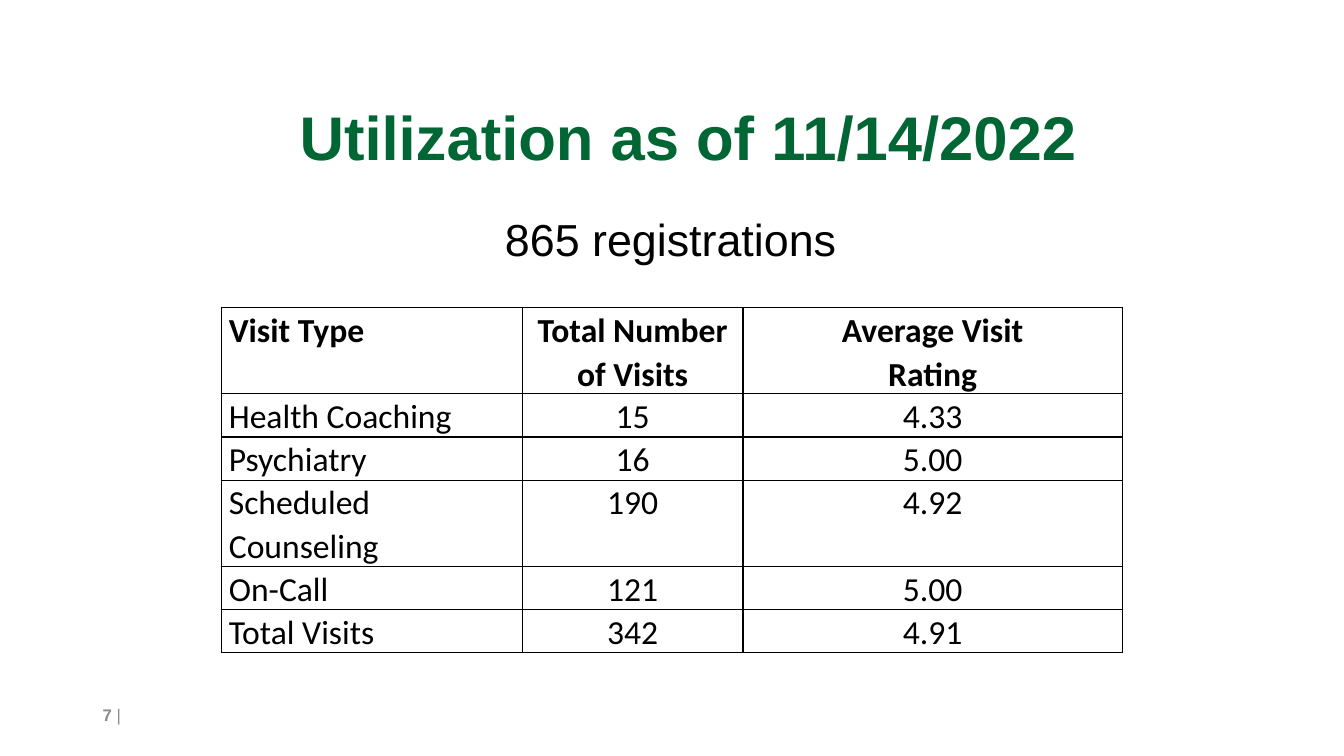
from pptx import Presentation
from pptx import util as u
from pptx.dml.color import RGBColor
from pptx.enum import text
from pptx.oxml import parse_xml
from pptx.oxml.ns import nsdecls

COLORS = {"green": "006633", "gray": "8C8C8C", "black": "000000"}
LEFT, CENTER = text.PP_ALIGN.LEFT, text.PP_ALIGN.CENTER
BOTTOM = text.MSO_ANCHOR.BOTTOM


def write(frame, content, size, color="black", font="Arial", bold=False,
          align=LEFT, spacing=None, wrap=True, anchor=text.MSO_ANCHOR.TOP):
    """Write one paragraph per line of content."""
    frame.word_wrap = wrap
    frame.vertical_anchor = anchor
    for i, line in enumerate(content.split("\n")):
        paragraph = frame.add_paragraph() if i else frame.paragraphs[0]
        paragraph.alignment = align
        if spacing:
            paragraph.line_spacing = spacing
        run = paragraph.add_run()
        run.text = line
        run.font.size = u.Pt(size)
        run.font.name = font
        run.font.bold = bold
        run.font.color.rgb = RGBColor.from_string(COLORS[color])


def add_borders(cell):
    """Draw a thin black line on all four sides of a cell."""
    properties = cell._tc.get_or_add_tcPr()
    for i, side in enumerate(("lnL", "lnR", "lnT", "lnB")):
        properties.insert(i, parse_xml(
            f'<a:{side} {nsdecls("a")} w="12700"><a:solidFill>'
            f'<a:srgbClr val="{COLORS["black"]}"/></a:solidFill></a:{side}>'))


deck = Presentation()
deck.slide_width, deck.slide_height = u.Inches(13.33), u.Inches(7.5)
slide = deck.slides.add_slide(deck.slide_layouts[6])

# Title
title = slide.shapes.add_textbox(u.Inches(1.08), u.Inches(0.32), u.Inches(11.5), u.Inches(1.45))
write(title.text_frame, "Utilization as of 11/14/2022", 44, color="green",
      bold=True, align=CENTER, spacing=0.9, anchor=BOTTOM)

# Page number
page_number = slide.shapes.add_textbox(u.Inches(0.92), u.Inches(6.84), u.Inches(4.5), u.Inches(0.4))
write(page_number.text_frame, "7 ", 12, color="gray", bold=True, anchor=BOTTOM)
divider = page_number.text_frame.paragraphs[0].add_run()
divider.text = "|"
divider.font.size = u.Pt(12)
divider.font.name = "Arial"
divider.font.color.rgb = RGBColor.from_string(COLORS["gray"])

# Visits table
visits = [
    ("Visit Type", "Total Number\nof Visits", "Average Visit\nRating"),
    ("Health Coaching", "15", "4.33"),
    ("Psychiatry", "16", "5.00"),
    ("Scheduled Counseling", "190", "4.92"),
    ("On-Call", "121", "5.00"),
    ("Total Visits", "342", "4.91"),
]
column_widths = (2.98, 2.19, 3.76)
row_height = 0.41
visit_table = slide.shapes.add_table(
    len(visits), len(column_widths), u.Inches(2.2), u.Inches(3.05),
    u.Inches(sum(column_widths)), u.Inches(row_height * len(visits))).table
visit_table.horz_banding = False
for column, width in zip(visit_table.columns, column_widths):
    column.width = u.Inches(width)
for r, visit in enumerate(visits):
    visit_table.rows[r].height = u.Inches(row_height)
    for c, value in enumerate(visit):
        cell = visit_table.cell(r, c)
        cell.margin_left = cell.margin_right = u.Inches(0.07)
        cell.margin_top = cell.margin_bottom = 0
        cell.fill.background()
        add_borders(cell)
        write(cell.text_frame, value, 24, font="Calibri", bold=r == 0,
              align=CENTER if c else LEFT, spacing=1.07)

# Registrations
registrations = slide.shapes.add_textbox(u.Inches(4.91), u.Inches(2.05), u.Inches(3.51), u.Inches(0.64))
write(registrations.text_frame, "865 registrations", 32, wrap=False)
registrations.text_frame.auto_size = text.MSO_AUTO_SIZE.SHAPE_TO_FIT_TEXT

deck.save("out.pptx")
